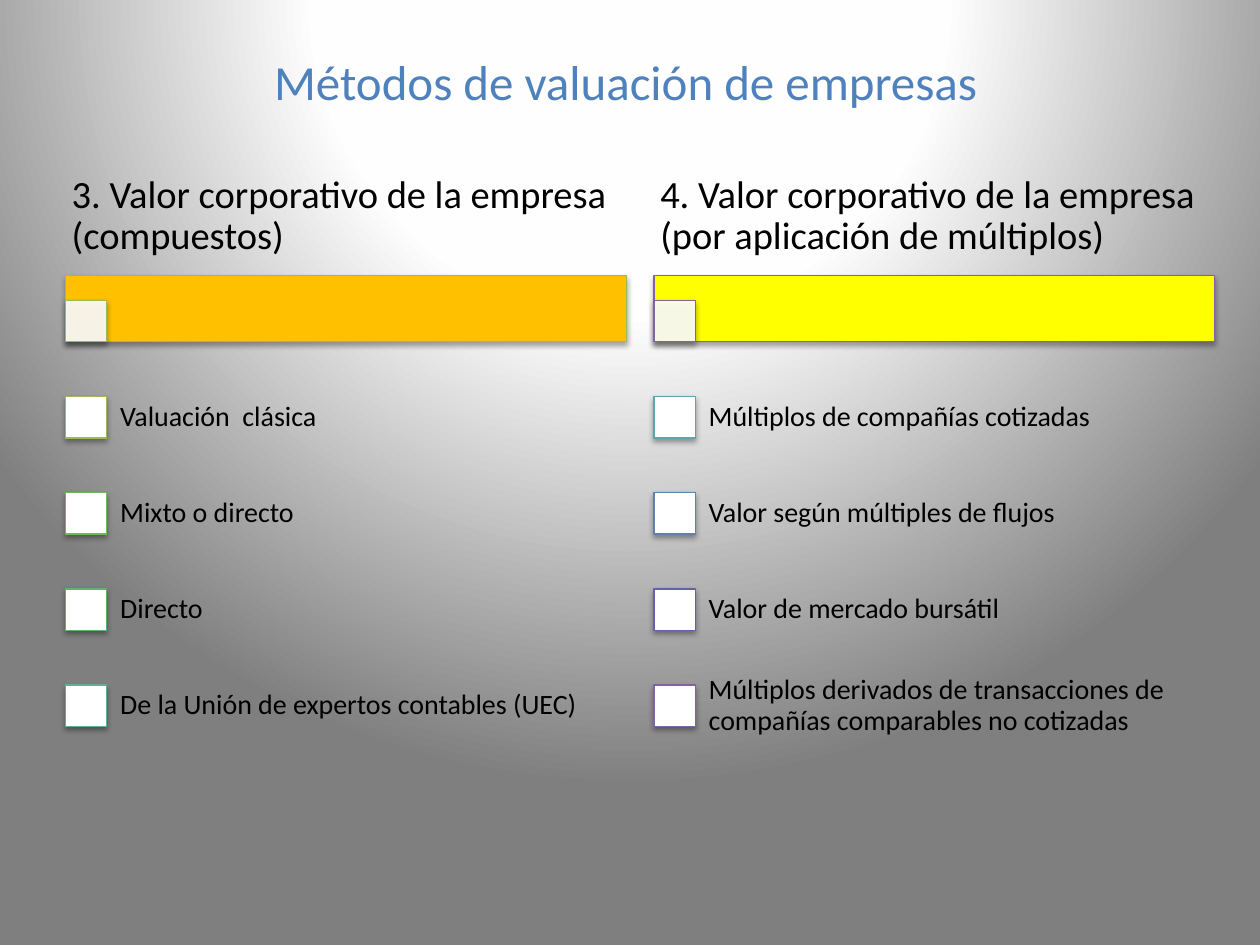
from pptx import Presentation
from pptx.util import Pt
from pptx.dml.color import RGBColor
from pptx.enum.shapes import MSO_SHAPE as Shape
from pptx.enum.text import PP_ALIGN as Align, MSO_ANCHOR as Anchor, MSO_AUTO_SIZE as Fit
from pptx.oxml import parse_xml as parse
from pptx.oxml.ns import nsdecls as names

rgb = RGBColor.from_string

deck = Presentation()
deck.slide_width, deck.slide_height = Pt(720), Pt(540)
slide = deck.slides.add_slide(deck.slide_layouts[6])

# Background: light from above the slide
slide.element.cSld.insert(0, parse(f'''<p:bg {names("p", "a")}><p:bgPr>
<a:gradFill rotWithShape="1"><a:gsLst>
<a:gs pos="0"><a:srgbClr val="FEFEFE"/></a:gs>
<a:gs pos="40000"><a:srgbClr val="FEFEFE"/></a:gs>
<a:gs pos="100000"><a:srgbClr val="7F7F7F"/></a:gs></a:gsLst>
<a:path path="circle"><a:fillToRect l="50000" t="-80000" r="50000" b="180000"/></a:path>
</a:gradFill><a:effectLst/></p:bgPr></p:bg>'''))

SHADE = f'''<a:effectLst {names("a")}>
<a:outerShdw blurRad="{Pt(3.1)}" dist="{Pt(1.8)}" dir="5400000" rotWithShape="0">
<a:srgbClr val="000000"><a:alpha val="35000"/></a:srgbClr></a:outerShdw></a:effectLst>'''


def text(words, spot, size, color, pads, frame, para):
    box = slide.shapes.add_textbox(*map(Pt, spot)).text_frame
    box.text = words
    line = box.paragraphs[0]
    sides = ("margin_left", "margin_top", "margin_right", "margin_bottom")
    look = dict(zip(sides, map(Pt, pads)), word_wrap=True, **frame)
    font = {"name": "Calibri", "size": Pt(size)}
    for part, form in ((box, look), (line, para), (line.runs[0].font, font)):
        for key, val in form.items():
            setattr(part, key, val)
    line.runs[0].font.color.rgb = rgb(color)


def block(spot, fill, edge, alpha=None):
    box = slide.shapes.add_shape(Shape.RECTANGLE, *map(Pt, spot))
    box.fill.solid()
    box.fill.fore_color.rgb = rgb(fill)
    box.line.color.rgb = rgb(edge)
    box.line.width = Pt(0.75)
    if alpha:
        tint = box.element.spPr.find(".//{*}srgbClr")
        tint.append(parse(f'<a:alpha {names("a")} val="{alpha * 1000}"/>'))
    box.element.spPr.append(parse(SHADE))


# Title
text("Métodos de valuación de empresas", (54, 26, 607, 41), 28, "4F81BD",
     (7.2, 3.6, 7.2, 3.6), {"auto_size": Fit.SHAPE_TO_FIT_TEXT},
     {"alignment": Align.CENTER})

# Columns: heading, bar colour, bar edge, items with their box edges
COLS = [
    ("3. Valor corporativo de la empresa (compuestos)", "FFC000", "9BBB59", [
        ("Valuación  clásica", "9BBB59"),
        ("Mixto o directo", "70B85A"),
        ("Directo", "5CB46F"),
        ("De la Unión de expertos contables (UEC)", "5DB195")]),
    ("4. Valor corporativo de la empresa (por aplicación de múltiplos)",
     "FFFF00", "8064A2", [
        ("Múltiplos de compañías cotizadas", "5FA4AD"),
        ("Valor según múltiples de flujos", "6181A9"),
        ("Valor de mercado bursátil", "6362A6"),
        ("Múltiplos derivados de transacciones de compañías comparables "
         "no cotizadas", "8064A2")]),
]
LEFT, STEP, WIDE = 37.4, 336.3, 320.5
TOP, ROW, SIDE, DENT = 211, 54.95, 23.7, 22.4
MID, TIGHT = {"vertical_anchor": Anchor.MIDDLE}, {"line_spacing": 0.9}

for col, (head, fill, edge, items) in enumerate(COLS):
    x = LEFT + col * STEP
    # Bar, its corner box and the heading above
    block((x, 157.6, WIDE, 37.7), fill, edge)
    block((x, 171.7, SIDE, SIDE), "FFFFFF", edge, 90)
    text(head, (x, 90, WIDE, 67.6), 22, "000000", (3.6, 2.4, 3.6, 2.4), MID, TIGHT)
    # Items, each box centred in its row
    for row, (item, rim) in enumerate(items):
        y = TOP + row * ROW
        block((x, y + (ROW - SIDE) / 2, SIDE, SIDE), "FFFFFF", rim)
        text(item, (x + DENT, y, WIDE - DENT, ROW), 16, "000000", [8.9] * 4, MID, TIGHT)

deck.save("out.pptx")
